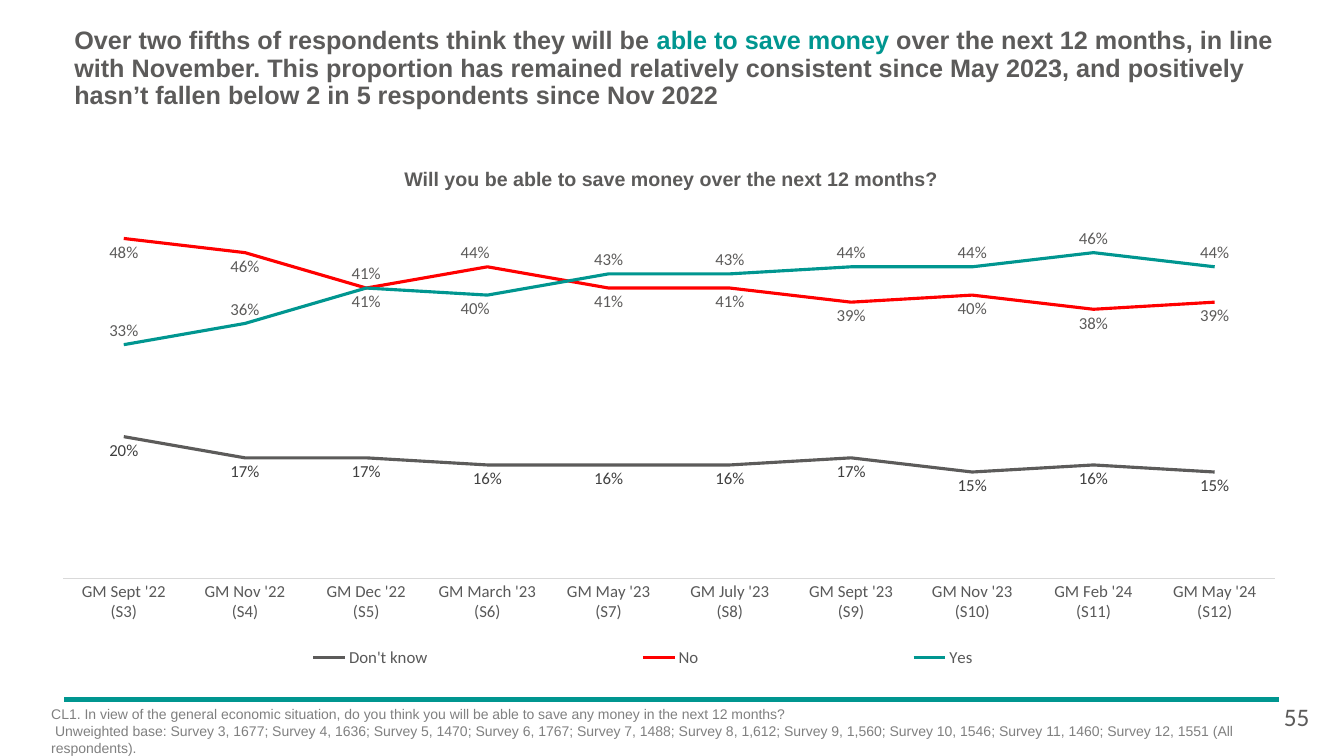
import pptx
import pptx.chart.data
import pptx.dml.color
import pptx.enum.chart
import pptx.enum.shapes
import pptx.enum.text
import pptx.util
from lxml import etree

Pt = pptx.util.Pt
ALIGN = pptx.enum.text.PP_ALIGN
ANCHOR = pptx.enum.text.MSO_ANCHOR
LABEL = pptx.enum.chart.XL_LABEL_POSITION

GREY, TEAL, RED = "5C5B5A", "009690", "FF0000"
AXIS_TEXT, AXIS_LINE, DARK, NOTE = "595959", "D9D9D9", "404040", "808080"

WAVES = [
    "GM Sept '22", "GM Nov '22", "GM Dec '22", "GM March '23", "GM May '23",
    "GM July '23", "GM Sept '23", "GM Nov '23", "GM Feb '24", "GM May '24",
]
FIRST_SURVEY = 3
MARCH = 3
# answer, percentages, line colour, label colour, label side, label side in March
ANSWERS = [
    ("Don't know", [20, 17, 17, 16, 16, 16, 17, 15, 16, 15],
     GREY, DARK, LABEL.BELOW, None),
    ("No", [48, 46, 41, 44, 41, 41, 39, 40, 38, 39],
     RED, GREY, LABEL.BELOW, LABEL.ABOVE),
    ("Yes", [33, 36, 41, 40, 43, 43, 44, 44, 46, 44],
     TEAL, GREY, LABEL.ABOVE, LABEL.BELOW),
]


def rgb(hex_colour):
    return pptx.dml.color.RGBColor.from_string(hex_colour)


def apply_format(target, values):
    for name, value in values.items():
        setattr(target, name, value)


def style_font(font, size, colour, name="Calibri", bold=False):
    apply_format(font, {"size": Pt(size), "name": name, "bold": bold})
    font.color.rgb = rgb(colour)


def add_copy(slide, box, paragraphs, size, name="Arial", bold=False,
             frame_format=None, paragraph_format=None):
    """Add a text box; each paragraph is a list of (text, colour) runs."""
    frame = slide.shapes.add_textbox(*map(Pt, box)).text_frame
    apply_format(frame, {"word_wrap": True, **(frame_format or {})})
    for index, pieces in enumerate(paragraphs):
        paragraph = frame.add_paragraph() if index else frame.paragraphs[0]
        apply_format(paragraph, paragraph_format or {})
        for text, colour in pieces:
            run = paragraph.add_run()
            run.text = text
            style_font(run.font, size, colour, name, bold)


def set_layout(parent, index, **values):
    """Insert a manual chart layout as the child at the given index."""
    tag = "{http://schemas.openxmlformats.org/drawingml/2006/chart}"
    for old in parent.findall(tag + "layout"):
        parent.remove(old)
    layout = etree.Element(tag + "layout")
    manual = etree.SubElement(layout, tag + "manualLayout")
    for name, value in values.items():
        etree.SubElement(manual, tag + name).set("val", str(value))
    parent.insert(index, layout)


def add_heading(slide, box):
    left, top, width, height = box
    headline = [
        ("Over two fifths of respondents think they will be ", GREY),
        ("able to save money ", TEAL),
        ("over the next 12 months, in line with November. This proportion has "
         "remained relatively consistent since May 2023, and positively "
         "hasn’t fallen below 2 in 5 respondents since Nov 2022", GREY),
    ]
    add_copy(slide, (left, top, width, 62.6), [headline], 18, bold=True,
             frame_format={"vertical_anchor": ANCHOR.MIDDLE},
             paragraph_format={"line_spacing": 0.9})
    question = [("Will you be able to save money over the next 12 months?", GREY)]
    margins = ("margin_left", "margin_top", "margin_right", "margin_bottom")
    add_copy(slide, (left + 85, top + height - 17, 697, 17), [question], 14, bold=True,
             frame_format=dict.fromkeys(margins, 0),
             paragraph_format={"alignment": ALIGN.CENTER})


def style_answer(series, colour, label_colour, side, march_side):
    series.smooth = False
    series.marker.style = pptx.enum.chart.XL_MARKER_STYLE.NONE
    series.format.line.width = Pt(2.25)
    series.format.line.color.rgb = rgb(colour)
    labels = series.data_labels
    apply_format(labels, {"show_value": True, "position": side,
                          "number_format": "0%", "number_format_is_linked": False})
    style_font(labels.font, 12, label_colour)
    if march_side is not None:
        march_label = series.points[MARCH].data_label
        style_font(march_label.font, 12, label_colour)
        march_label.position = march_side
        set_layout(labels._element.dLbl_lst[0], 1, x=-0.01, y=0)


def add_savings_chart(slide, box):
    savings = pptx.chart.data.CategoryChartData(number_format="0%")
    savings.categories = [f"{wave}\n(S{number})"
                          for number, wave in enumerate(WAVES, FIRST_SURVEY)]
    for answer, percentages, *_ in ANSWERS:
        savings.add_series(answer, [percent / 100 for percent in percentages])
    chart = slide.shapes.add_chart(
        pptx.enum.chart.XL_CHART_TYPE.LINE, *map(Pt, box), savings).chart
    apply_format(chart, {"has_title": False, "has_legend": True})
    style_font(chart.font, 10, "000000")
    chart.plots[0].vary_by_categories = False

    none = pptx.enum.chart.XL_TICK_MARK.NONE
    waves = chart.category_axis
    apply_format(waves, {"major_tick_mark": none, "has_major_gridlines": False})
    waves.format.line.width = Pt(0.75)
    waves.format.line.color.rgb = rgb(AXIS_LINE)
    style_font(waves.tick_labels.font, 12, AXIS_TEXT)
    apply_format(chart.value_axis, {
        "minimum_scale": 0, "maximum_scale": 0.5,
        "has_major_gridlines": False, "visible": False})

    legend = chart.legend
    apply_format(legend, {"position": pptx.enum.chart.XL_LEGEND_POSITION.LEFT,
                          "include_in_layout": False})
    style_font(legend.font, 12, AXIS_TEXT)
    set_layout(legend._element, 1, xMode="edge", yMode="edge",
               x=0.04, y=0.885, w=0.88, h=0.055)
    set_layout(chart._chartSpace.chart.plotArea, 0, layoutTarget="inner",
               xMode="edge", yMode="edge", x=0.007, y=0.026, w=0.989, h=0.724)

    for series, (_, _, *look) in zip(chart.plots[0].series, ANSWERS):
        style_answer(series, *look)


def add_footer(slide, box):
    left, top, width, height = box
    rule = slide.shapes.add_connector(
        pptx.enum.shapes.MSO_CONNECTOR.STRAIGHT,
        Pt(left + 16.5), Pt(top), Pt(left + 884), Pt(top))
    rule.line.width = Pt(3)
    rule.line.color.rgb = rgb(TEAL)
    etree.SubElement(
        rule._element.spPr,
        "{http://schemas.openxmlformats.org/drawingml/2006/main}effectLst")
    notes = [
        "CL1. In view of the general economic situation, do you think you will be "
        "able to save any money in the next 12 months?",
        " Unweighted base: Survey 3, 1677; Survey 4, 1636; Survey 5, 1470; "
        "Survey 6, 1767; Survey 7, 1488; Survey 8, 1,612; Survey 9, 1,560; "
        "Survey 10, 1546; Survey 11, 1460; Survey 12, 1551 (All respondents).",
    ]
    add_copy(slide, (left, top + 0.7, 862.6, height), [[(note, NOTE)] for note in notes], 10)
    add_copy(slide, (left + width - 38, top - 2.2, 38, 29), [[("55", GREY)]], 18, "Calibri")


def main():
    deck = pptx.Presentation()
    apply_format(deck, {"slide_width": Pt(960), "slide_height": Pt(540)})
    slide = deck.slides.add_slide(deck.slide_layouts[6])
    add_heading(slide, (46, 18, 875.5, 118))
    add_savings_chart(slide, (39, 151.2, 875.5, 349.2))
    add_footer(slide, (29.5, 499.7, 918.5, 40))
    deck.save("out.pptx")


if __name__ == "__main__":
    main()
